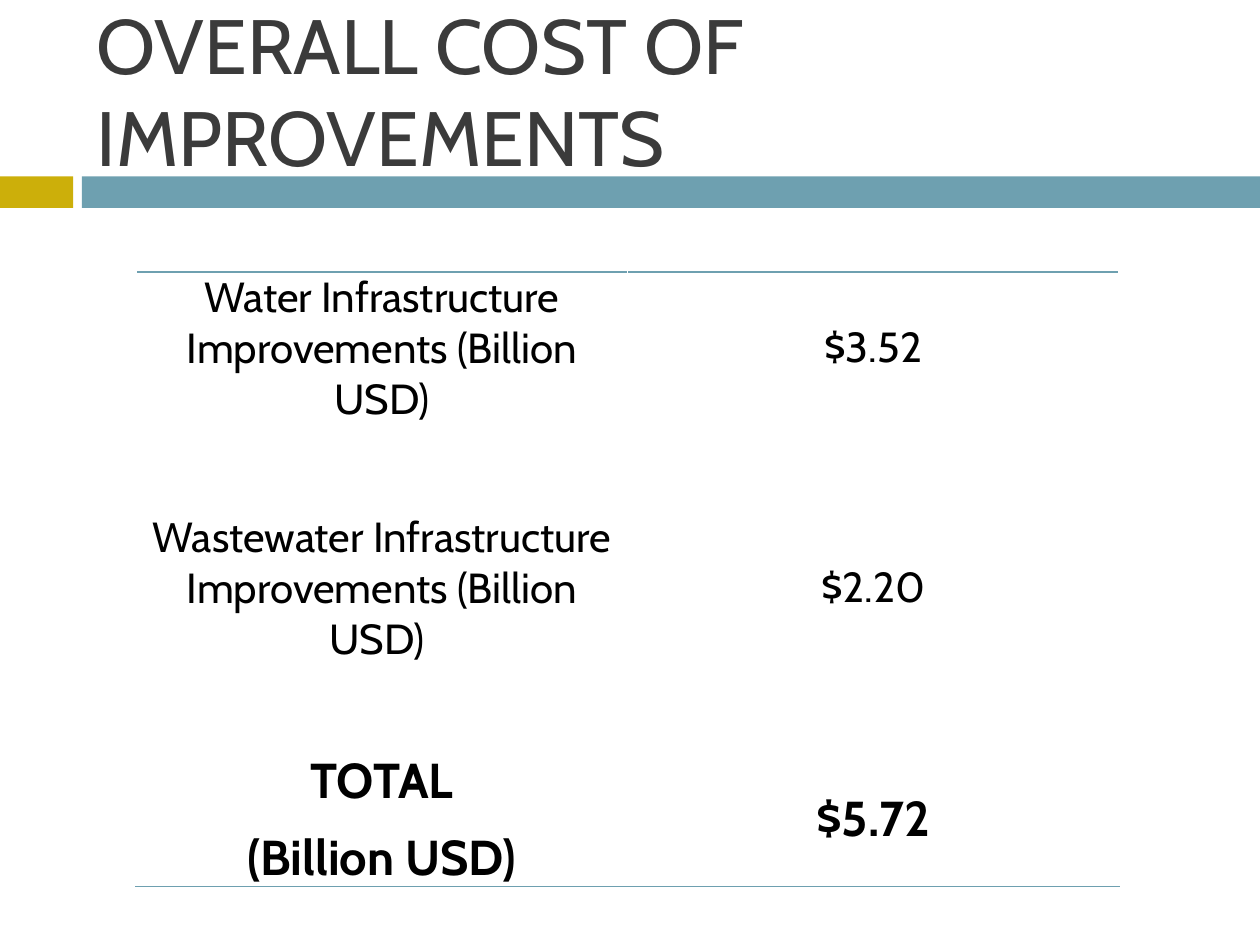
from dataclasses import dataclass

from lxml.etree import SubElement
from pptx import Presentation
from pptx.dml.color import RGBColor
from pptx.enum.shapes import MSO_SHAPE
from pptx.enum.text import MSO_ANCHOR, PP_ALIGN
from pptx.oxml.ns import qn
from pptx.util import Inches, Pt

TITLE = "OVERALL COST OF IMPROVEMENTS"
# Each entry: label paragraphs, cost, is it the total
COSTS = [
    (["Water Infrastructure Improvements (Billion USD)"], "$3.52", False),
    (["Wastewater Infrastructure Improvements (Billion USD) "], "$2.20", False),
    (["TOTAL", "(Billion USD)"], "$5.72", True),
]
ROW_HEIGHTS = [0.83, 0.7, 0.84, 0.7, 0.65]  # spacer rows sit between the costs
COLUMN_WIDTH = 3.9


@dataclass(frozen=True)
class Theme:
    font: str = "Cabin"
    title: str = "3B3B3B"
    text: str = "000000"
    gold: str = "CCAF0A"
    teal: str = "6EA0B0"
    title_size: int = 44
    body_size: int = 24
    total_size: int = 28


THEME = Theme()


def add_span(para, text, size, color, bold=False):
    span = para.add_run()
    span.text = text
    span.font.name = THEME.font
    span.font.size = Pt(size)
    span.font.bold = bold
    span.font.color.rgb = RGBColor.from_string(color)


def add_bar(page, left, width, color):
    bar = page.shapes.add_shape(
        MSO_SHAPE.RECTANGLE, Inches(left), Inches(1.4), Inches(width), Inches(0.25))
    bar.shadow.inherit = False
    bar.fill.solid()
    bar.fill.fore_color.rgb = RGBColor.from_string(color)
    bar.line.fill.background()


def add_title(page):
    box = page.shapes.add_textbox(Inches(0.67), Inches(0.17), Inches(9.33), Inches(1.08))
    frame = box.text_frame
    frame.word_wrap = True
    frame.vertical_anchor = MSO_ANCHOR.MIDDLE
    add_span(frame.paragraphs[0], TITLE, THEME.title_size, THEME.title)


def fill_cell(cell, lines, total):
    cell.vertical_anchor = MSO_ANCHOR.MIDDLE
    cell.margin_left = cell.margin_right = Inches(0.06)
    cell.margin_top = cell.margin_bottom = 0
    size = THEME.total_size if total else THEME.body_size
    frame = cell.text_frame
    for index, line in enumerate(lines):
        para = frame.add_paragraph() if index else frame.paragraphs[0]
        para.alignment = PP_ALIGN.CENTER
        para.space_after = Pt(10)
        add_span(para, line, size, THEME.text, total)


def add_border(cell, side):
    """Rule one side of a cell; side is 'T' or 'B'."""
    properties = cell._tc.get_or_add_tcPr()
    line = SubElement(properties, qn(f"a:ln{side}"), w=str(Pt(1)))
    fill = SubElement(line, qn("a:solidFill"))
    SubElement(fill, qn("a:srgbClr"), val=THEME.teal)
    properties.insert(0, line)  # borders come before the fill


def add_cost_table(page):
    frame = page.shapes.add_table(
        len(ROW_HEIGHTS), 2, Inches(1.08), Inches(2.16),
        Inches(2 * COLUMN_WIDTH), Inches(sum(ROW_HEIGHTS)))
    table = frame.table
    table.first_row = table.horz_banding = False
    for column in table.columns:
        column.width = Inches(COLUMN_WIDTH)
    for row, height in zip(table.rows, ROW_HEIGHTS):
        row.height = Inches(height)
    for cell in table.iter_cells():
        cell.fill.background()
    for index, (label, cost, total) in enumerate(COSTS):
        fill_cell(table.cell(2 * index, 0), label, total)
        fill_cell(table.cell(2 * index, 1), [cost], total)
    for column in range(2):
        add_border(table.cell(0, column), "T")
        add_border(table.cell(len(ROW_HEIGHTS) - 1, column), "B")


def main():
    deck = Presentation()
    deck.slide_width, deck.slide_height = Inches(10), Inches(7.5)
    page = deck.slides.add_slide(deck.slide_layouts[6])
    add_bar(page, 0, 0.58, THEME.gold)
    add_bar(page, 0.65, 9.35, THEME.teal)
    add_title(page)
    add_cost_table(page)
    deck.save("out.pptx")


if __name__ == "__main__":
    main()
